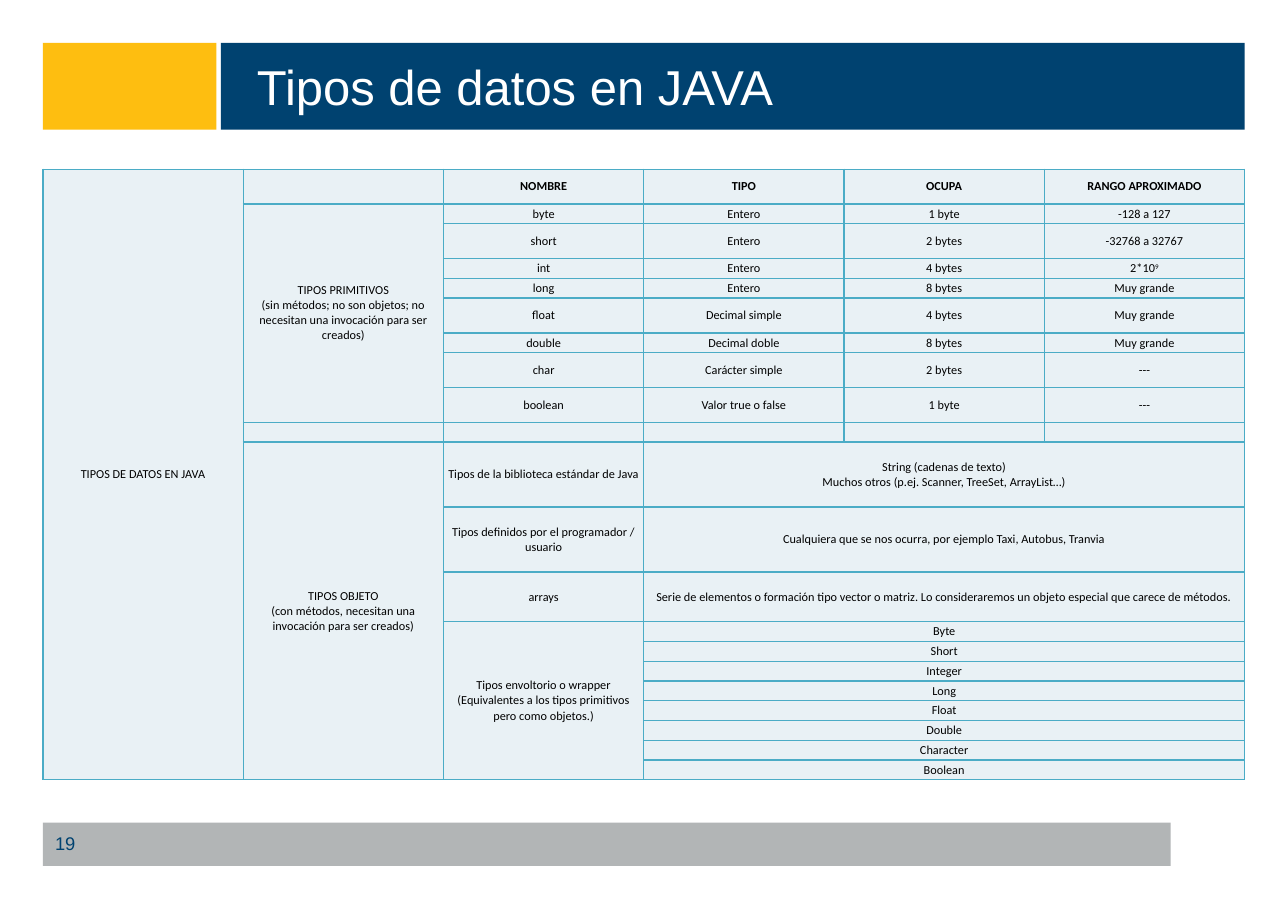
from dataclasses import dataclass

from lxml import etree
from pptx import Presentation
from pptx import util as u
from pptx.dml.color import RGBColor
from pptx.enum import shapes, text
from pptx.oxml import ns

Pt = u.Pt

YELLOW = RGBColor(0xFE, 0xBE, 0x10)
NAVY = RGBColor(0x00, 0x42, 0x70)
GREY = RGBColor(0xB2, 0xB5, 0xB6)
WHITE = RGBColor(0xFF, 0xFF, 0xFF)
BLACK = RGBColor(0x00, 0x00, 0x00)
PALE = RGBColor(0xE9, 0xF1, 0xF5)
TEAL = RGBColor(0x4B, 0xAC, 0xC6)

MARGIN = 28.1
COLUMNS = 6
COLUMN_WIDTH = 130.9
LOW, TALL, MIDDLE, HIGH = 12.95, 22.75, 32.4, 42.5
ROW_HEIGHTS = [TALL, LOW, TALL, LOW, LOW, TALL, LOW, TALL, TALL, LOW,
               HIGH, HIGH, MIDDLE] + [LOW] * 8
CELL_SIZE = 8


@dataclass
class Band:
    left: float
    top: float
    width: float
    height: float
    color: RGBColor


@dataclass
class Entry:
    row: int
    col: int
    words: str
    rows: int = 1
    cols: int = 1
    bold: bool = False


BANDS = [
    Band(MARGIN, MARGIN, 113.4, 56.7, YELLOW),
    Band(144.4, MARGIN, 669, 56.7, NAVY),
    Band(MARGIN, 537.7, 737, 28.3, GREY),
]

HEADINGS = ["NOMBRE", "TIPO", "OCUPA", "RANGO APROXIMADO"]

# A caret marks the superscript that follows it
PRIMITIVES = [
    ("byte", "Entero", "1 byte", "-128 a 127"),
    ("short", "Entero", "2 bytes", "-32768 a 32767"),
    ("int", "Entero", "4 bytes", "2*10^9"),
    ("long", "Entero", "8 bytes", "Muy grande"),
    ("float", "Decimal simple", "4 bytes", "Muy grande"),
    ("double", "Decimal doble", "8 bytes", "Muy grande"),
    ("char", "Carácter simple", "2 bytes", "---"),
    ("boolean", "Valor true o false", "1 byte", "---"),
]

OBJECTS = [
    ("Tipos de la biblioteca estándar de Java",
     "String (cadenas de texto)\n"
     "Muchos otros (p.ej. Scanner, TreeSet, ArrayList…)"),
    ("Tipos definidos por el programador / usuario",
     "Cualquiera que se nos ocurra, por ejemplo Taxi, Autobus, Tranvia"),
    ("arrays",
     "Serie de elementos o formación tipo vector o matriz. "
     "Lo consideraremos un objeto especial que carece de métodos."),
]

WRAPPERS = ["Byte", "Short", "Integer", "Long", "Float", "Double", "Character", "Boolean"]


def list_entries() -> list[Entry]:
    entries = [
        Entry(0, 0, "TIPOS DE DATOS EN JAVA", rows=len(ROW_HEIGHTS)),
        Entry(1, 1, "TIPOS PRIMITIVOS\n(sin métodos; no son objetos; no "
                    "necesitan una invocación para ser creados)", rows=8),
        Entry(10, 1, "TIPOS OBJETO\n(con métodos, necesitan una "
                     "invocación para ser creados)", rows=11),
        Entry(13, 2, "Tipos envoltorio o wrapper (Equivalentes a los tipos "
                     "primitivos pero como objetos.)", rows=8),
    ]
    entries += [Entry(0, col, words, bold=True) for col, words in enumerate(HEADINGS, 2)]
    for row, values in enumerate(PRIMITIVES, 1):
        entries += [Entry(row, col, words) for col, words in enumerate(values, 2)]
    for row, (name, detail) in enumerate(OBJECTS, 10):
        entries += [Entry(row, 2, name), Entry(row, 3, detail, cols=3)]
    entries += [Entry(row, 3, name, cols=3) for row, name in enumerate(WRAPPERS, 13)]
    return entries


def add_band(page, band: Band) -> None:
    box = page.shapes.add_shape(shapes.MSO_SHAPE.RECTANGLE, Pt(band.left), Pt(band.top),
                                Pt(band.width), Pt(band.height))
    box.shadow.inherit = False
    box.fill.solid()
    box.fill.fore_color.rgb = band.color
    box.line.fill.background()


def write_line(box, words: str, size: float, color: RGBColor) -> None:
    frame = box.text_frame
    frame.word_wrap = True
    frame.auto_size = text.MSO_AUTO_SIZE.NONE
    frame.vertical_anchor = text.MSO_ANCHOR.MIDDLE
    frame.margin_left = frame.margin_right = Pt(7.9)
    frame.margin_top = frame.margin_bottom = Pt(3.6)
    para = frame.paragraphs[0]
    para.text = words
    para.alignment = text.PP_ALIGN.LEFT
    para.font.name, para.font.size = "Arial", Pt(size)
    para.font.color.rgb = color


def style_cell(cell) -> None:
    cell.margin_left = cell.margin_right = Pt(1.5)
    cell.margin_top = cell.margin_bottom = Pt(1.3)
    cell.vertical_anchor = text.MSO_ANCHOR.MIDDLE
    properties = cell._tc.get_or_add_tcPr()
    for side in ("lnL", "lnR", "lnT", "lnB"):
        border = etree.SubElement(properties, ns.qn(f"a:{side}"), w=str(Pt(1)))
        fill = etree.SubElement(border, ns.qn("a:solidFill"))
        etree.SubElement(fill, ns.qn("a:srgbClr"), val=str(TEAL))
    cell.fill.solid()
    cell.fill.fore_color.rgb = PALE


def write_cell(cell, entry: Entry) -> None:
    frame = cell.text_frame
    for index, words in enumerate(entry.words.split("\n")):
        para = frame.add_paragraph() if index else frame.paragraphs[0]
        base, _, power = words.partition("^")
        para.add_run().text = base
        if power:
            span = para.add_run()
            span.text = power
            span.font._element.set("baseline", "30000")
        para.alignment = text.PP_ALIGN.CENTER
        para.font.name, para.font.size = "Calibri", Pt(CELL_SIZE)
        para.font.bold = entry.bold
        para.font.color.rgb = BLACK


def add_type_table(page) -> None:
    table = page.shapes.add_table(len(ROW_HEIGHTS), COLUMNS, Pt(MARGIN), Pt(110.6),
                                  Pt(COLUMNS * COLUMN_WIDTH), Pt(sum(ROW_HEIGHTS))).table
    table.first_row = table.horz_banding = False
    for column in table.columns:
        column.width = Pt(COLUMN_WIDTH)
    for row, height in zip(table.rows, ROW_HEIGHTS):
        row.height = Pt(height)
    for cell in table.iter_cells():
        style_cell(cell)
    for entry in list_entries():
        cell = table.cell(entry.row, entry.col)
        if entry.rows * entry.cols > 1:
            cell.merge(table.cell(entry.row + entry.rows - 1, entry.col + entry.cols - 1))
        write_cell(cell, entry)
    # Empty cells need the small size too, or their rows grow
    for cell in table.iter_cells():
        if not cell.text:
            etree.SubElement(cell.text_frame.paragraphs[0]._p, ns.qn("a:endParaRPr"),
                             sz=str(CELL_SIZE * 100))


def main() -> None:
    deck = Presentation()
    deck.slide_width, deck.slide_height = Pt(841.68), Pt(595.44)
    page = deck.slides.add_slide(deck.slide_layouts[5])

    # Coloured bands, placed behind the title
    title = page.shapes.title
    for band in BANDS:
        add_band(page, band)
    page.shapes._spTree.append(title._element)

    # Title and page number
    title.left, title.top, title.width, title.height = Pt(160), Pt(MARGIN), Pt(653), Pt(56.7)
    write_line(title, "Tipos de datos en JAVA", 32, WHITE)
    number = page.shapes.add_textbox(Pt(MARGIN), Pt(537.2), Pt(196.6), Pt(28.3))
    write_line(number, "19", 12, NAVY)

    # Table of data types
    add_type_table(page)
    deck.save("out.pptx")


if __name__ == "__main__":
    main()
